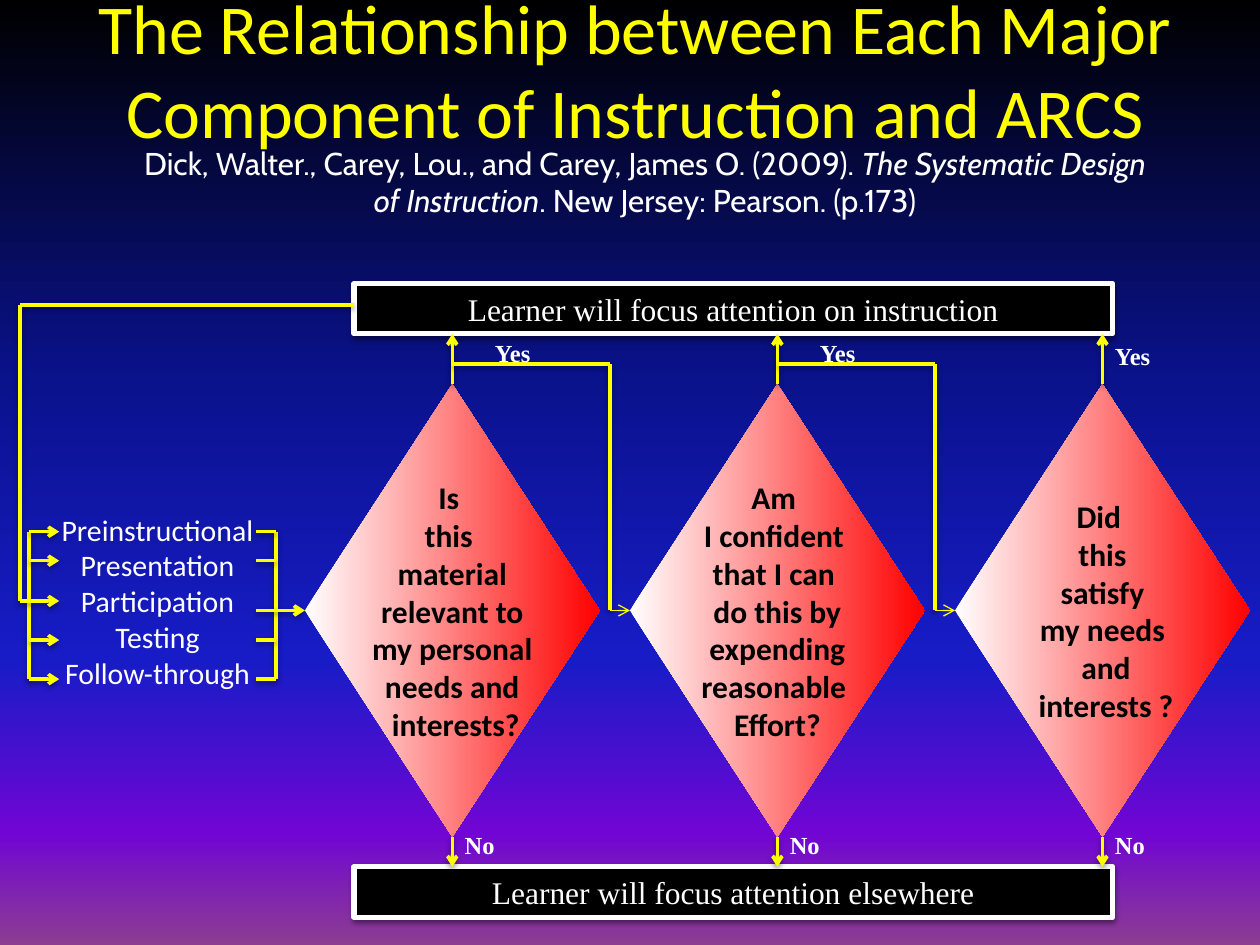
from lxml import etree
from pptx import Presentation
from pptx.dml.color import RGBColor
from pptx.enum.shapes import MSO_CONNECTOR, MSO_SHAPE
from pptx.enum.text import MSO_ANCHOR, PP_ALIGN
from pptx.oxml.ns import qn
from pptx.util import Inches, Pt

STRAIGHT = MSO_CONNECTOR.STRAIGHT
RECT, DECISION = MSO_SHAPE.RECTANGLE, MSO_SHAPE.FLOWCHART_DECISION
TOP, MIDDLE = MSO_ANCHOR.TOP, MSO_ANCHOR.MIDDLE
LEFT, CENTER = PP_ALIGN.LEFT, PP_ALIGN.CENTER

BLACK = RGBColor(0x00, 0x00, 0x00)
WHITE = RGBColor(0xFF, 0xFF, 0xFF)
YELLOW = RGBColor(0xFF, 0xFF, 0x00)
RED = RGBColor(0xFF, 0x00, 0x00)
SKY = [(0, BLACK), (40, RGBColor(0x0A, 0x12, 0x8C)), (70, RGBColor(0x18, 0x1C, 0xC7)),
       (88, RGBColor(0x70, 0x05, 0xD4)), (100, RGBColor(0x8C, 0x3D, 0x91))]
SANS, SERIF, CITE = "Calibri", "Times New Roman", "Cabin"

# Chart geometry, in inches
BAR_X, BAR_W, BAR_H = 2.81, 6.02, 0.4
FOCUS_Y, ELSEWHERE_Y = 2.25, 6.88
DIAMOND_X, DIAMOND_Y, DIAMOND_W, DIAMOND_H = 2.42, 3.05, 2.34, 3.59
STEP = 2.58

COMPONENTS = ["Preinstructional", "Presentation", "Participation", "Testing",
              "Follow-through"]
QUESTIONS = [
    ["Is ", "this ", "material", "relevant to", "my personal", "needs and", " interests?"],
    ["Am ", "I confident ", "that I can ", "do this by", " expending ", "reasonable ",
     "Effort?"],
    ["Did ", "this", " satisfy ", "my needs", " and", " interests ?"],
]


def write(tf, paragraphs, size, font=SANS, color=WHITE, bold=False, align=CENTER,
          anchor=TOP, wrap=True):
    """Fill a text frame; a paragraph is a string or a list of (text, italic)."""
    tf.word_wrap = wrap
    tf.vertical_anchor = anchor
    for i, runs in enumerate(paragraphs):
        p = tf.paragraphs[0] if i == 0 else tf.add_paragraph()
        p.alignment = align
        for text, italic in [(runs, False)] if isinstance(runs, str) else runs:
            r = p.add_run()
            r.text = text
            r.font.name, r.font.size = font, Pt(size)
            r.font.bold, r.font.italic = bold, italic
            r.font.color.rgb = color


def add_text(s, box, paragraphs, size, **fmt):
    sp = s.shapes.add_textbox(*map(Inches, box))
    write(sp.text_frame, paragraphs, size, **fmt)


def add_shape(s, kind, box):
    sp = s.shapes.add_shape(kind, *map(Inches, box))
    sp.shadow.inherit = False
    return sp


def set_effects(sp, shadow=True):
    """Give a shape or connector a soft shadow below it, or none at all."""
    sp_pr = sp._element.spPr
    effects = sp_pr.find(qn("a:effectLst"))
    if effects is None:
        effects = etree.SubElement(sp_pr, qn("a:effectLst"))
    if shadow:
        outer = etree.SubElement(effects, qn("a:outerShdw"), blurRad=str(Pt(3.1)),
                                 dist=str(Pt(1.6)), dir="5400000", rotWithShape="0")
        color = etree.SubElement(outer, qn("a:srgbClr"), val="000000")
        etree.SubElement(color, qn("a:alpha"), val="38000")


def add_line(s, x1, y1, x2, y2, arrow=False, width=2):
    ln = s.shapes.add_connector(STRAIGHT, *map(Inches, (x1, y1, x2, y2)))
    ln.line.color.rgb = YELLOW
    ln.line.width = Pt(width)
    if arrow:
        etree.SubElement(ln.line._get_or_add_ln(), qn("a:tailEnd"), type="arrow")
    set_effects(ln, shadow=width > 1)


def paint_background(s):
    fill = s.background.fill
    fill.gradient()
    fill.gradient_angle = 270
    stops = s._element.find(".//" + qn("a:gsLst"))
    for old in list(stops):
        stops.remove(old)
    for pos, color in SKY:
        stop = etree.SubElement(stops, qn("a:gs"), pos=str(pos * 1000))
        etree.SubElement(stop, qn("a:srgbClr"), val=str(color))


def header(s, box):
    """Title with the citation below it."""
    x, y, w, h = box
    add_text(s, (x, y, w, 1.09),
             ["The Relationship between Each Major Component of Instruction and ARCS"],
             40, color=YELLOW, anchor=MIDDLE)
    citation = [("Dick, Walter., Carey, Lou., and Carey, James O. (2009). ", False),
                ("The Systematic Design of Instruction", True),
                (". New Jersey: Pearson. (p.173)", False)]
    add_text(s, (x + 0.63, y + 1.09, w - 1.1, h - 1.09), [citation], 18, font=CITE)


def outcome_bar(s, box, text):
    sp = add_shape(s, RECT, box)
    sp.fill.solid()
    sp.fill.fore_color.rgb = BLACK
    sp.line.color.rgb = WHITE
    sp.line.width = Pt(3)
    set_effects(sp)
    write(sp.text_frame, [text], 18, font=SERIF)


def component_list(s, box):
    """Instruction components between an input and an output bracket."""
    x, y, w, h = box
    add_text(s, box, COMPONENTS, 17)
    top, bottom = y + 0.21, y + 1.38
    left, right, middle = x - 0.08, x + w, DIAMOND_Y + DIAMOND_H / 2
    add_line(s, left, top, left, bottom)
    add_line(s, right, top, right, bottom)
    for row in (top, top + 0.23, bottom - 0.31, bottom):
        add_line(s, left, row, x + 0.16, row, arrow=True)
        add_line(s, right, row, right - 0.16, row)
    add_line(s, right - 0.16, middle, DIAMOND_X, middle, arrow=True)

    # Feedback loop from the focus bar back to the list
    loop_x, loop_y, entry_y = x - 0.15, FOCUS_Y + 0.17, y + 0.76
    add_line(s, loop_x, loop_y, BAR_X, loop_y)
    add_line(s, loop_x, loop_y, loop_x, entry_y)
    add_line(s, loop_x, entry_y, x + 0.16, entry_y, arrow=True)


def question(s, box, lines, last):
    """Decision diamond with its Yes, No and next-question branches."""
    x, y, w, h = box
    sp = add_shape(s, DECISION, box)
    sp.fill.gradient()
    sp.fill.gradient_angle = 0
    for stop, pos, color in zip(sp.fill.gradient_stops, (0, 1), (WHITE, RED)):
        stop.position, stop.color.rgb = pos, color
    sp.line.fill.background()
    write(sp.text_frame, lines, 18, color=BLACK, bold=True, anchor=MIDDLE, wrap=False)

    # Yes and No arrows
    cx, cy = x + w / 2, y + h / 2
    add_line(s, cx, y, cx, FOCUS_Y + BAR_H, arrow=True)
    add_line(s, cx, y + h, cx, ELSEWHERE_Y, arrow=True)

    # Branch to the next question
    if not last:
        branch_x, branch_y = cx + 1.25, y - 0.16
        add_line(s, cx, branch_y, branch_x, branch_y)
        add_line(s, branch_x, branch_y, branch_x, cy)
        add_line(s, branch_x, cy, x + STEP, cy, arrow=True, width=0.75)

    yes_x, yes_y = (cx, y - 0.39) if last else (cx + 0.24, y - 0.42)
    for text, lx, ly in (("Yes", yes_x, yes_y), ("No", cx, y + h - 0.1)):
        add_text(s, (lx, ly, 0.6, 0.34), [text], 14, font=SERIF, bold=True, align=LEFT)


def main():
    prs = Presentation()
    prs.slide_width, prs.slide_height = Inches(10), Inches(7.5)
    s = prs.slides.add_slide(prs.slide_layouts[6])
    paint_background(s)
    header(s, (0.39, 0, 9.3, 1.8))
    outcome_bar(s, (BAR_X, FOCUS_Y, BAR_W, BAR_H),
                "Learner will focus attention on instruction")
    outcome_bar(s, (BAR_X, ELSEWHERE_Y, BAR_W, BAR_H),
                "Learner will focus attention elsewhere")
    component_list(s, (0.31, 4.01, 1.88, 1.53))
    for i, lines in enumerate(QUESTIONS):
        question(s, (DIAMOND_X + i * STEP, DIAMOND_Y, DIAMOND_W, DIAMOND_H), lines,
                 last=i == len(QUESTIONS) - 1)
    prs.save("out.pptx")


if __name__ == "__main__":
    main()
